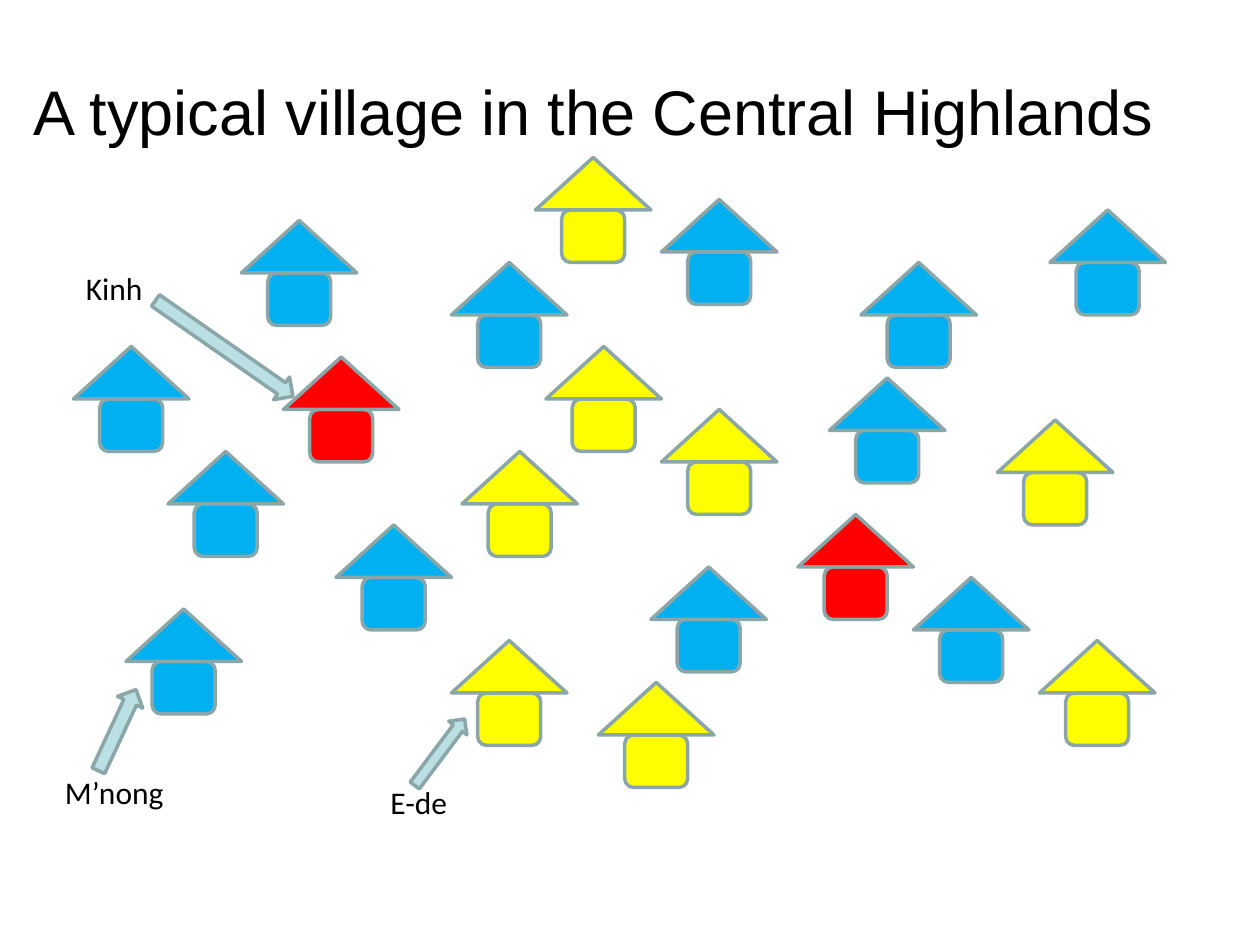
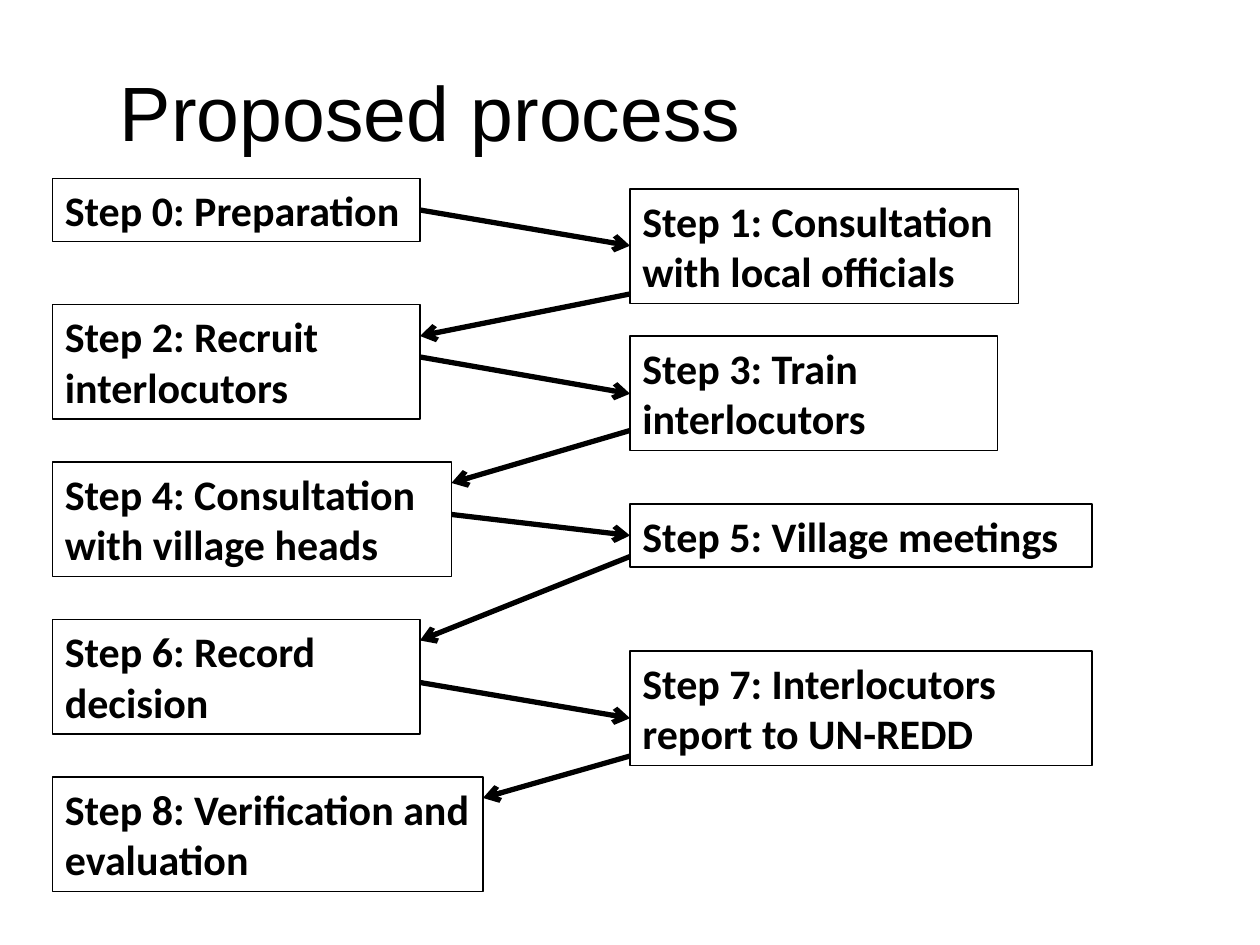
from lxml.etree import SubElement
from pptx import Presentation
from pptx.dml.color import RGBColor
from pptx.enum.shapes import MSO_CONNECTOR, MSO_SHAPE as Shape
from pptx.enum.text import MSO_ANCHOR, MSO_AUTO_SIZE, PP_ALIGN as Align
from pptx.oxml.ns import qn
from pptx.util import Inches, Pt

COLORS = {
    "text": "000000", "outline": "8AA6A8", "pointer": "BBE0E3",
    "Kinh": "FF0000", "M’nong": "00B0F0", "E-de": "FFFF00",
}

# Columns and rows count twelfths of an inch.
VILLAGE_TITLE = "A typical village in the Central Highlands"
HOUSES = {
    "Kinh": [(27, 34), (76, 49)],
    "M’nong": [(16, 43), (23, 21), (32, 50), (62, 54), (43, 25), (63, 19),
               (87, 55), (79, 36), (82, 25), (12, 58), (100, 20), (7, 33)],
    "E-de": [(44, 43), (57, 65), (51, 15), (43, 61), (63, 39), (95, 40),
             (52, 33), (99, 61)],
}
LABELS = [("M’nong", 5, 73, 14), ("E-de", 36, 74, 11), ("Kinh", 7, 25, 14)]
POINTERS = [
    (1.67, 2.10, 0.22, 1.33, 304.9),
    (0.82, 5.44, 0.22, 0.71, 204.9),
    (3.40, 5.64, 0.18, 0.66, 216.9),
]

PROCESS_TITLE = "Proposed process"
STEPS = [
    ("Preparation", 17, 35, 1),
    ("Consultation with local officials", 18, 37, 2),
    ("Recruit interlocutors", 29, 35, 2),
    ("Train interlocutors", 32, 35, 2),
    ("Consultation with village heads", 44, 38, 2),
    ("Village meetings", 48, 44, 1),
    ("Record decision", 59, 35, 2),
    ("Interlocutors report to UN-REDD", 62, 44, 2),
    ("Verification and evaluation", 74, 41, 2),
]
STEP_COLUMNS = (5, 60)
STEP_HEIGHTS = {1: 6, 2: 10.92}
ARROW_ROWS = [(20, 23.4), (28, 32), (34, 37.5), (41, 46),
              (49, 51), (53, 61), (65, 68.4), (72, 76)]


def grid(*counts):
    return [Inches(count / 12) for count in counts]


def rgb(name):
    return RGBColor.from_string(COLORS[name])


def write(frame, text, size, font="Calibri", bold=False, align=Align.LEFT):
    frame.text = text
    frame.word_wrap = True
    paragraph = frame.paragraphs[0]
    paragraph.alignment = align
    paragraph.font.size = Pt(size)
    paragraph.font.name = font
    paragraph.font.bold = bold
    paragraph.font.color.rgb = rgb("text")


def titled_slide(deck, text, left, width, size, align):
    slide = deck.slides.add_slide(deck.slide_layouts[5])
    title = slide.shapes.title
    title.left, title.top, title.width, title.height = grid(left, 3, width, 15)
    write(title.text_frame, text, size, "Arial", align=align)
    title.text_frame.auto_size = MSO_AUTO_SIZE.NONE
    title.text_frame.vertical_anchor = MSO_ANCHOR.MIDDLE
    return slide


def outlined(shapes, kind, place, fill):
    part = shapes.add_shape(kind, *place)
    part.shadow.inherit = False
    part.fill.solid()
    part.fill.fore_color.rgb = rgb(fill)
    part.line.color.rgb = rgb("outline")
    part.line.width = Pt(2)
    return part


def add_house(slide, people, column, row):
    house = slide.shapes.add_group_shape().shapes
    outlined(house, Shape.ROUNDED_RECTANGLE,
             grid(column + 2.5, row + 5, 6, 5), people)
    outlined(house, Shape.ISOSCELES_TRIANGLE, grid(column, row, 11, 5), people)


def add_step(slide, number, step):
    text, row, width, lines = step
    box = slide.shapes.add_shape(
        Shape.RECTANGLE,
        *grid(STEP_COLUMNS[number % 2], row, width, STEP_HEIGHTS[lines]))
    box.shadow.inherit = False
    box.fill.background()
    box.line.color.rgb = rgb("text")
    box.line.width = Pt(0.75)
    write(box.text_frame, f"Step {number}: {text}", 24, bold=True)
    box.text_frame.vertical_anchor = MSO_ANCHOR.TOP


def add_arrow(slide, number, start_row, end_row):
    left_step = number + number % 2
    left_edge = STEP_COLUMNS[0] + STEPS[left_step][2]
    ends = [left_edge, STEP_COLUMNS[1]]
    start, end = ends[::-1] if number % 2 else ends
    arrow = slide.shapes.add_connector(
        MSO_CONNECTOR.STRAIGHT, *grid(start, start_row, end, end_row))
    arrow.line.color.rgb = rgb("text")
    arrow.line.width = Pt(3)
    SubElement(arrow.line._get_or_add_ln(), qn("a:tailEnd"), type="arrow")
    SubElement(arrow._element.spPr, qn("a:effectLst"))


def build_village(deck):
    slide = titled_slide(deck, VILLAGE_TITLE, 2, 110, 36, Align.LEFT)
    for people, places in HOUSES.items():
        for column, row in places:
            add_house(slide, people, column, row)
    for people, column, row, width in LABELS:
        label = slide.shapes.add_textbox(*grid(column, row, width, 4.8))
        write(label.text_frame, people, 18)
    for *place, angle in POINTERS:
        pointer = outlined(slide.shapes, Shape.DOWN_ARROW,
                           map(Inches, place), "pointer")
        pointer.rotation = angle


def build_process(deck):
    slide = titled_slide(deck, PROCESS_TITLE, 4, 74, 44, Align.CENTER)
    for number, step in enumerate(STEPS):
        add_step(slide, number, step)
    for number, rows in enumerate(ARROW_ROWS):
        add_arrow(slide, number, *rows)


def main():
    deck = Presentation()
    deck.slide_width, deck.slide_height = Inches(10), Inches(7.5)
    build_village(deck)
    build_process(deck)
    deck.save("out.pptx")


if __name__ == "__main__":
    main()
